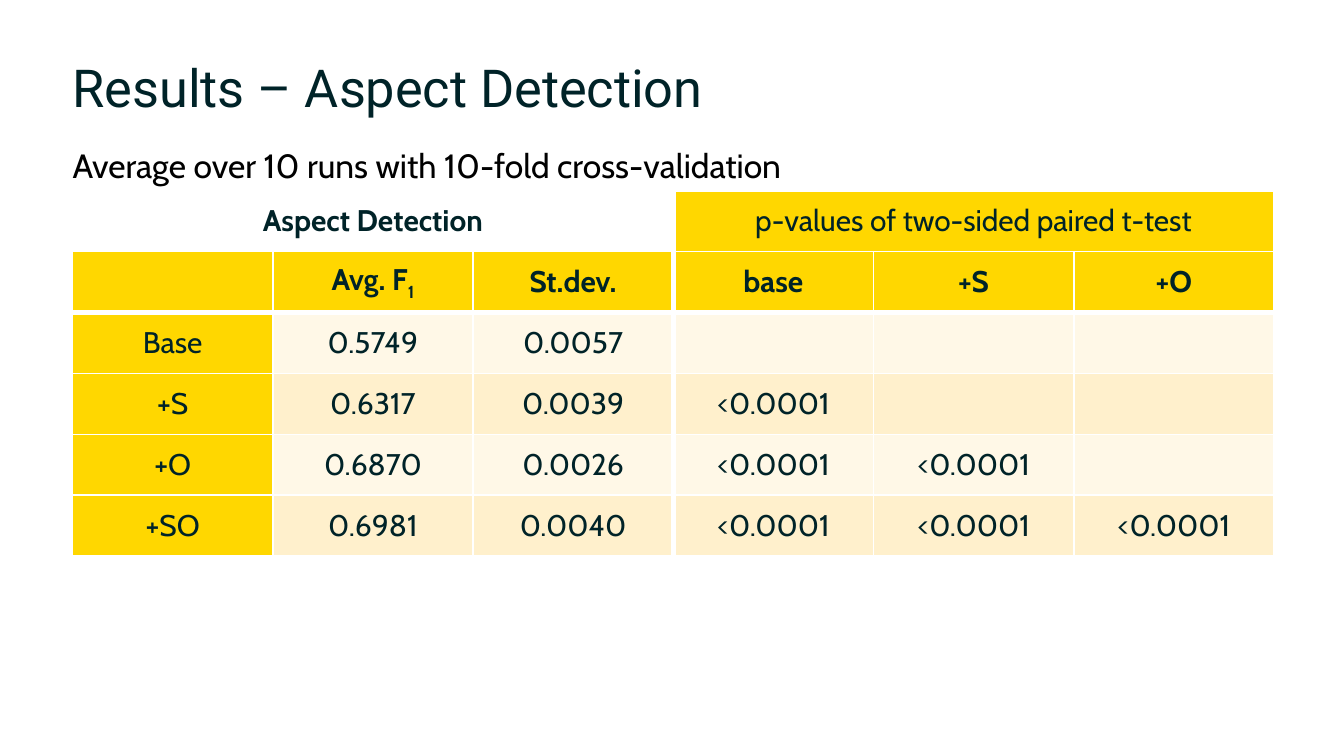
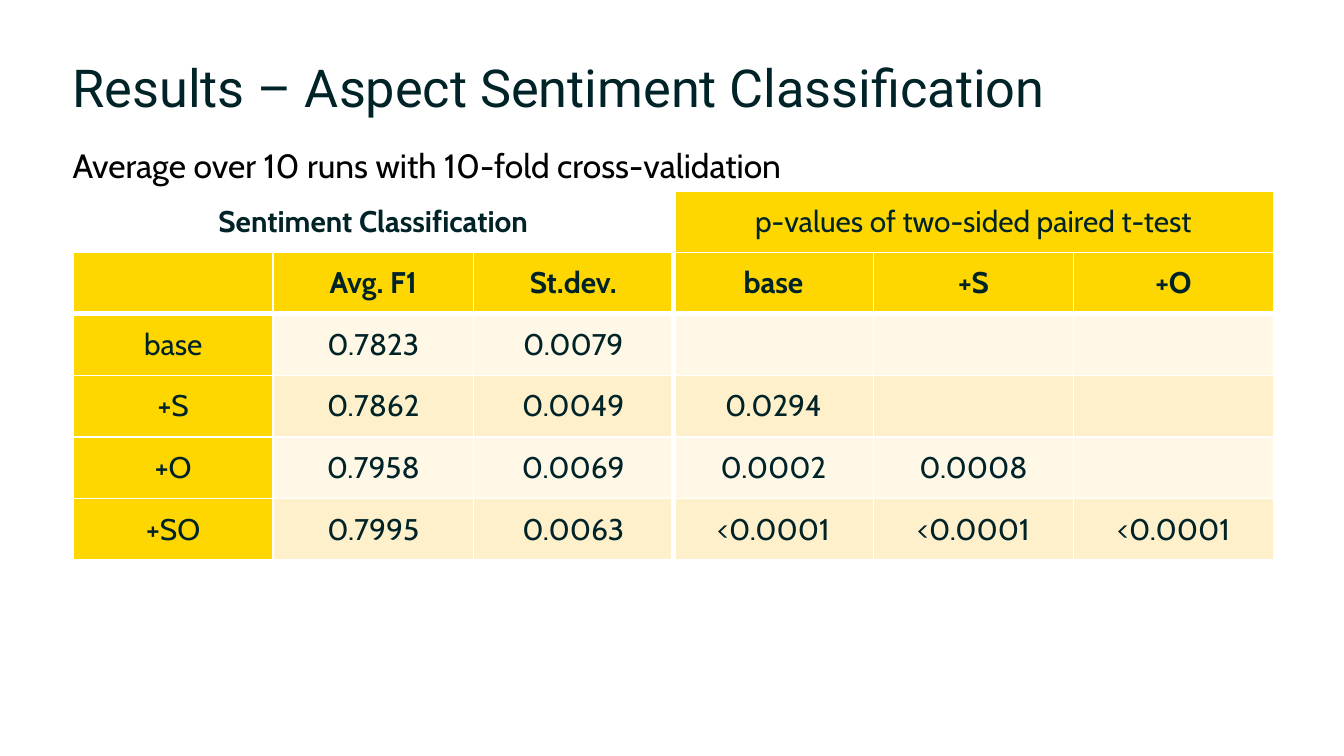
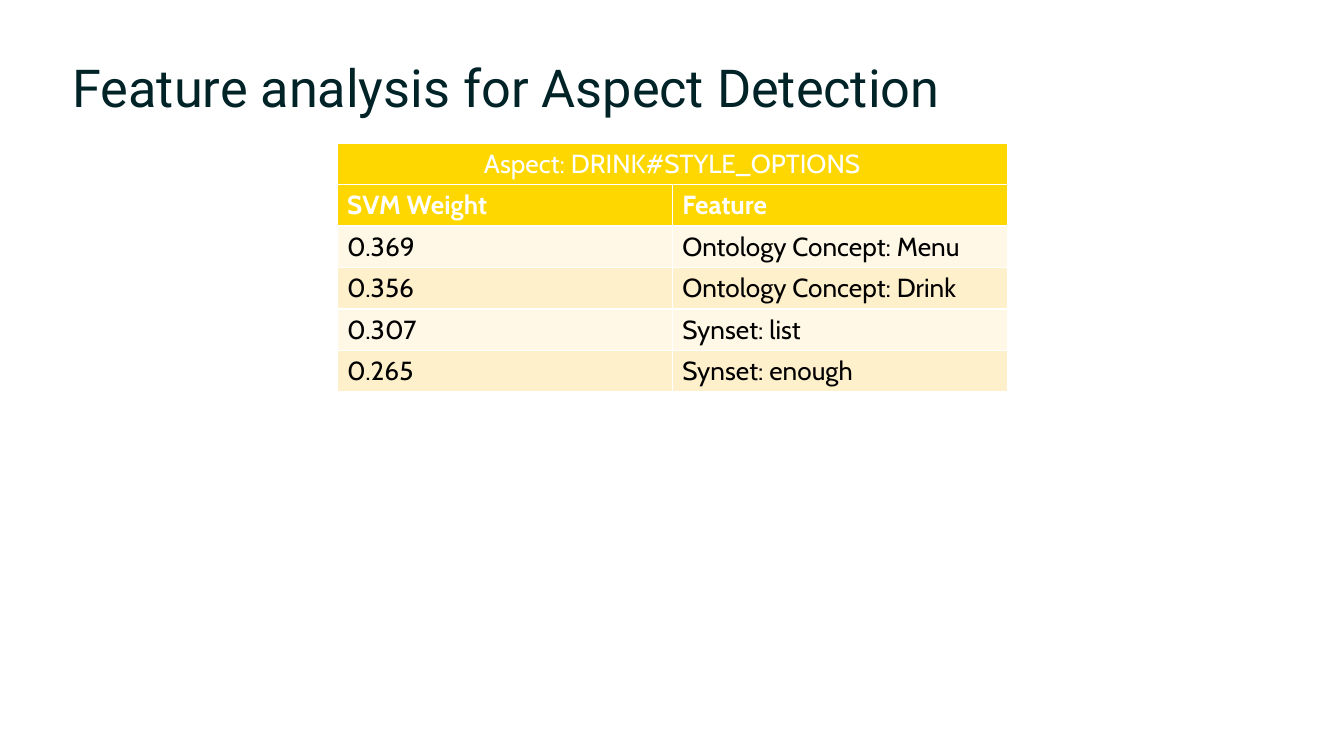
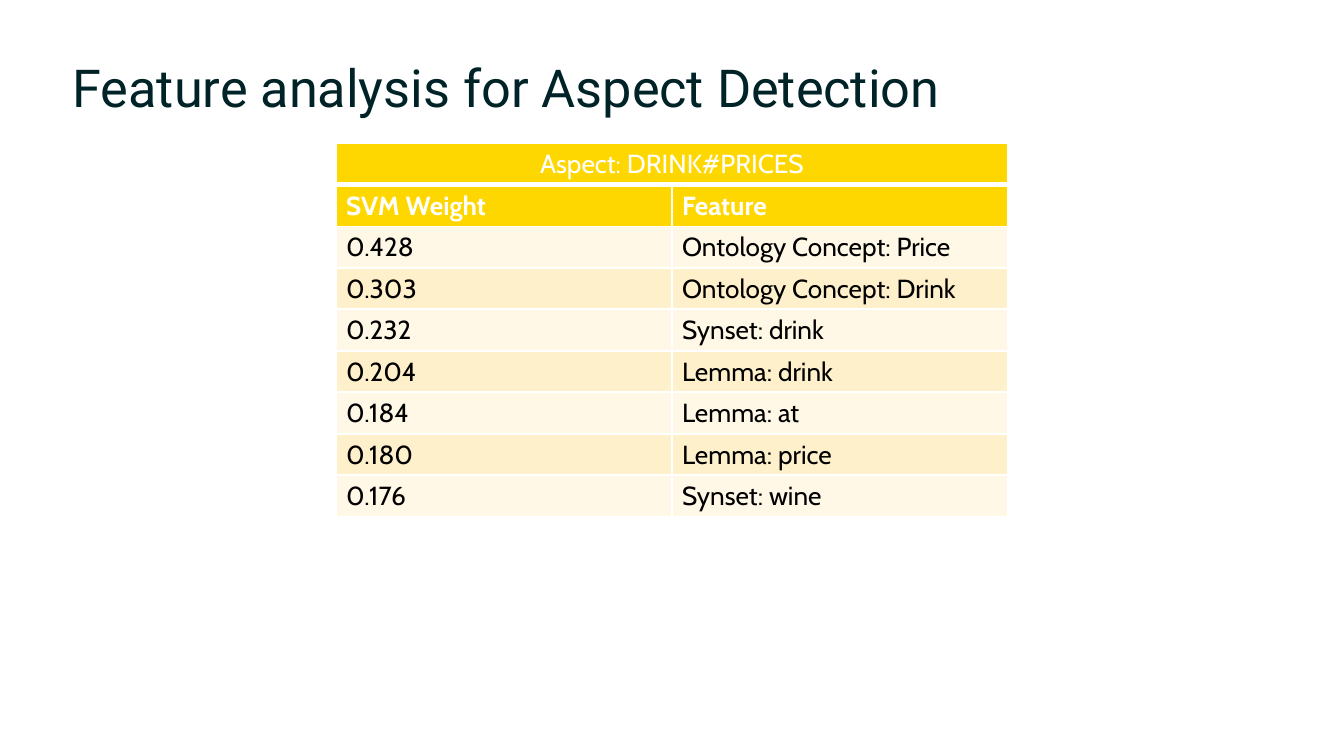
import pptx
import pptx.dml.color
import pptx.enum.text
import pptx.oxml
import pptx.util
from pptx.oxml.ns import nsdecls

Pt = pptx.util.Pt
CENTER = pptx.enum.text.PP_ALIGN.CENTER
MIDDLE = pptx.enum.text.MSO_ANCHOR.MIDDLE

COLORS = {
    "ink": "002328", "black": "000000", "white": "FFFFFF",
    "gold": "FFD700", "pale": "FFF8E7", "cream": "FFF0CC",
}
STYLES = {
    "title": {"name": "Roboto", "size": Pt(28), "color": "ink"},
    "subtitle": {"name": "Cabin", "size": Pt(18), "color": "black"},
    "results": {"name": "Cabin", "size": Pt(16), "color": "ink"},
    "feature_head": {"name": "Cabin", "size": Pt(14), "color": "white"},
    "feature_body": {"name": "Cabin", "size": Pt(14), "color": "black"},
}
TITLE_BOX = (38.9, 31, 643.6, 45.2)
SUBTITLE_BOX = (38.9, 76.3, 643.2, 25.2)
SUBTITLE = "Average over 10 runs with 10-fold cross-validation"
P_VALUES = "p-values of two-sided paired t-test"
THIN, THICK = 1, 3

RESULTS = [
    {
        "title": "Results – Aspect Detection",
        "box": (38.9, 102.2, 643.6, 195.8),
        "side_margin": 9.4,
        "rows": [
            ["Aspect Detection", "", "", P_VALUES, "", ""],
            ["", ("Avg. F", "1"), "St.dev.", "base", "+S", "+O"],
            ["Base", "0.5749", "0.0057", "", "", ""],
            ["+S", "0.6317", "0.0039", "<0.0001", "", ""],
            ["+O", "0.6870", "0.0026", "<0.0001", "<0.0001", ""],
            ["+SO", "0.6981", "0.0040", "<0.0001", "<0.0001", "<0.0001"],
        ],
    },
    {
        "title": "Results – Aspect Sentiment Classification",
        "box": (39.2, 102.2, 643.2, 198),
        "side_margin": 5.4,
        "rows": [
            ["Sentiment Classification", "", "", P_VALUES, "", ""],
            ["", "Avg. F1", "St.dev.", "base", "+S", "+O"],
            ["base", "0.7823", "0.0079", "", "", ""],
            ["+S", "0.7862", "0.0049", "0.0294", "", ""],
            ["+O", "0.7958", "0.0069", "0.0002", "0.0008", ""],
            ["+SO", "0.7995", "0.0063", "<0.0001", "<0.0001", "<0.0001"],
        ],
    },
]
FEATURE_TITLE = "Feature analysis for Aspect Detection"
FEATURE_HEADER = ["SVM Weight", "Feature"]
FEATURES = [
    {
        "aspect": "Aspect: DRINK#STYLE_OPTIONS",
        "box": (180.6, 76.6, 359.2, 133.2),
        "first_rule": THIN,
        "rows": [
            ["0.369", "Ontology Concept: Menu"],
            ["0.356", "Ontology Concept: Drink"],
            ["0.307", "Synset: list"],
            ["0.265", "Synset: enough"],
        ],
    },
    {
        "aspect": "Aspect: DRINK#PRICES",
        "box": (180, 76.8, 360, 199.8),
        "first_rule": THICK,
        "rows": [
            ["0.428", "Ontology Concept: Price"],
            ["0.303", "Ontology Concept: Drink"],
            ["0.232", "Synset: drink"],
            ["0.204", "Lemma: drink"],
            ["0.184", "Lemma: at"],
            ["0.180", "Lemma: price"],
            ["0.176", "Synset: wine"],
        ],
    },
]


def rgb(color):
    return pptx.dml.color.RGBColor.from_string(COLORS[color])


def add_run(paragraph, text, style, bold=False):
    run = paragraph.add_run()
    run.text = text
    formats = dict(STYLES[style], bold=bold)
    run.font.color.rgb = rgb(formats.pop("color"))
    for name, value in formats.items():
        setattr(run.font, name, value)
    return run


def add_line(slide, text, box, style, spacing):
    """Add a one-line text box without margins."""
    frame = slide.shapes.add_textbox(*map(Pt, box)).text_frame
    frame.word_wrap = True
    for side in ("left", "top", "right", "bottom"):
        setattr(frame, f"margin_{side}", 0)
    paragraph = frame.paragraphs[0]
    paragraph.line_spacing = Pt(spacing)
    add_run(paragraph, text, style)


def add_titled_slide(presentation, title):
    slide = presentation.slides.add_slide(presentation.slide_layouts[6])
    add_line(slide, title, TITLE_BOX, "title", 32)
    return slide


def add_plain_table(slide, box, row_count, column_count):
    table = slide.shapes.add_table(row_count, column_count, *map(Pt, box)).table
    table.first_row = table.horz_banding = False
    for column in table.columns:
        column.width = Pt(box[2] / column_count)
    for row in table.rows:
        row.height = Pt(box[3] / row_count)
    return table


def set_borders(cell, **widths):
    """Draw white borders; widths names the sides that are not thin."""
    properties = cell._tc.get_or_add_tcPr()
    for side in "LRTB":
        width = Pt(widths.get(side, THIN))
        properties.append(pptx.oxml.parse_xml(
            f'<a:ln{side} {nsdecls("a")} w="{width}"><a:solidFill>'
            f'<a:srgbClr val="{COLORS["white"]}"/></a:solidFill></a:ln{side}>'))


def fill_cell(cell, text, fill, style, bold=False, side_margin=5.4):
    cell.fill.solid()
    cell.fill.fore_color.rgb = rgb(fill)
    cell.margin_left = cell.margin_right = Pt(side_margin)
    cell.margin_top = cell.margin_bottom = Pt(2.7)
    if text:
        base, subscript = text if isinstance(text, tuple) else (text, "")
        paragraph = cell.text_frame.paragraphs[0]
        add_run(paragraph, base, style, bold)
        if subscript:
            run = add_run(paragraph, subscript, style, bold)
            run._r.get_or_add_rPr().set("baseline", "-25000")


def band(row):
    return "cream" if row % 2 else "pale"


def result_fill(row, column):
    if row == 0:
        return "white" if column < 3 else "gold"
    return "gold" if row == 1 or column == 0 else band(row)


def result_borders(row, column):
    """Thick rules part scores from p-values, and headings from values."""
    widths = {}
    if column == 2 or (row, column) == (0, 0):
        widths["R"] = THICK
    if column == 3:
        widths["L"] = THICK
    if row == 1:
        widths["B"] = THICK
    if row == 2:
        widths["T"] = THICK
    return widths


def add_results_slide(presentation, content):
    slide = add_titled_slide(presentation, content["title"])
    add_line(slide, SUBTITLE, SUBTITLE_BOX, "subtitle", 23)
    rows = content["rows"]
    table = add_plain_table(slide, content["box"], len(rows), len(rows[0]))
    for row, texts in enumerate(rows):
        for column, text in enumerate(texts):
            cell = table.cell(row, column)
            set_borders(cell, **result_borders(row, column))
            bold = row == 1 or (row, column) == (0, 0)
            fill_cell(cell, text, result_fill(row, column), "results", bold,
                      content["side_margin"])
            cell.vertical_anchor = MIDDLE
            cell.text_frame.paragraphs[0].alignment = CENTER
    for first in (0, 3):
        table.cell(0, first).merge(table.cell(0, first + 2))


def add_features_slide(presentation, content):
    slide = add_titled_slide(presentation, FEATURE_TITLE)
    rows = [[content["aspect"], ""], FEATURE_HEADER] + content["rows"]
    table = add_plain_table(slide, content["box"], len(rows), len(FEATURE_HEADER))
    for row, texts in enumerate(rows):
        heading = row < 2
        for column, text in enumerate(texts):
            cell = table.cell(row, column)
            set_borders(cell, B=content["first_rule"] if row == 0 else THIN)
            fill_cell(cell, text, "gold" if heading else band(row),
                      "feature_head" if heading else "feature_body", row == 1)
    table.cell(0, 0).merge(table.cell(0, 1))
    table.cell(0, 0).text_frame.paragraphs[0].alignment = CENTER


def main():
    presentation = pptx.Presentation()
    presentation.slide_width, presentation.slide_height = Pt(720), Pt(405)
    for content in RESULTS:
        add_results_slide(presentation, content)
    for content in FEATURES:
        add_features_slide(presentation, content)
    presentation.save("out.pptx")


if __name__ == "__main__":
    main()
